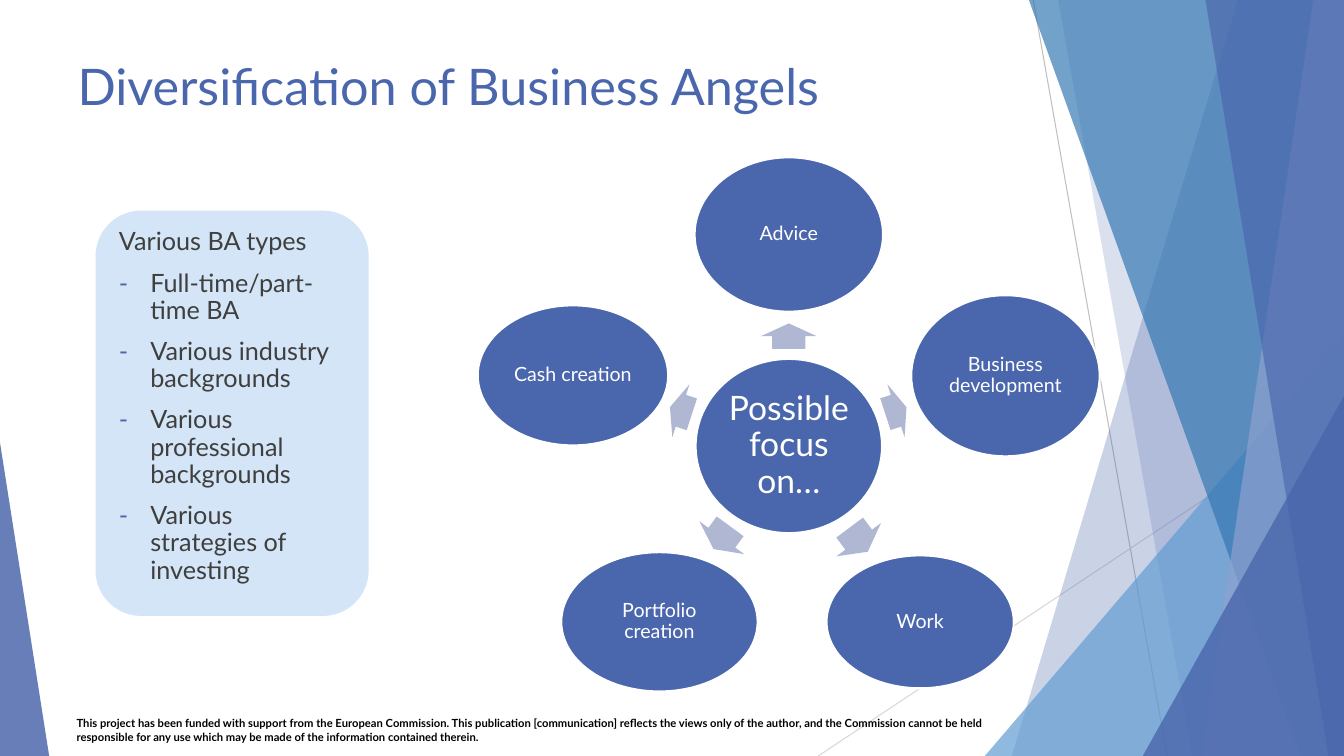
from lxml.etree import SubElement
from pptx import Presentation
from pptx.dml.color import RGBColor
from pptx.enum.shapes import MSO_CONNECTOR, MSO_SHAPE
from pptx.enum.text import MSO_ANCHOR, MSO_AUTO_SIZE, PP_ALIGN
from pptx.oxml.ns import qn
from pptx.util import Cm, Pt

BLUE = RGBColor(0x4A, 0x66, 0xAC)
SKY = RGBColor(0x62, 0x9D, 0xD1)
OCEAN = RGBColor(0x34, 0x77, 0xB2)
PERIWINKLE = RGBColor(0x8F, 0xA1, 0xCF)
ARROW = RGBColor(0xAF, 0xB7, 0xD2)
PANEL = RGBColor(0xD3, 0xE5, 0xF6)
INK = RGBColor(0x3F, 0x3F, 0x3F)
BLACK = RGBColor(0, 0, 0)
WHITE = RGBColor(0xFF, 0xFF, 0xFF)
GREY = RGBColor(0xBF, 0xBF, 0xBF)
PALE_GREY = RGBColor(0xD8, 0xD8, 0xD8)

W, H = 33.87, 19.05
TITLE = "Diversification of Business Angels"
TYPES_HEAD = "Various BA types"
TYPES = [
    "Full-time/part-time BA",
    "Various industry backgrounds",
    "Various professional backgrounds",
    "Various strategies of investing",
]
FUNDING = (
    "This project has been funded with support from the European Commission. "
    "This publication [communication] reflects the views only of the author, "
    "and the Commission cannot be held responsible for any use which may be "
    "made of the information contained therein."
)
HUB = ("Possible focus on…", 19.88, 11.24, 4.7, 4.39)
# label, centre x, centre y, width, height, arrow (centre x, centre y, length, angle)
FOCUS = [
    ("Advice", 19.88, 5.91, 4.75, 3.89, (19.88, 8.47, 0.64, 270)),
    ("Business development", 25.34, 9.47, 4.75, 4.06, (22.58, 10.35, 0.56, 342)),
    ("Work", 23.19, 15.67, 4.72, 3.35, (21.64, 13.6, 0.76, 53.2)),
    ("Portfolio creation", 16.62, 15.67, 4.95, 3.51, (18.19, 13.55, 0.71, 126.3)),
    ("Cash creation", 14.44, 9.46, 4.8, 3.53, (17.16, 10.35, 0.58, 198)),
]
ARROW_WIDTH = 1.4
RAYS = [
    (26.04, 0, 29.41, H, GREY),
    (W, 10.24, 20.62, H, PALE_GREY),
]
FACETS = [
    ("band", (31.19, 25.5), BLUE, 29),
    ("band", (26.67, 30.05), BLUE, 20),
    ("triangle", (24.82, 8.46, W, 1), SKY, 71),
    ("band", (25.93, 32.79), OCEAN, 69),
    ("band", (33.1, 30.28), PERIWINKLE, 69),
    ("band", (30.38, 33.48), BLUE, 64),
    ("triangle", (28.8, 9.98, W, 1), BLUE, 80),
    ("triangle", (0, 11.15, 1.24, 0), BLUE, 84),
]


def assign(obj, values):
    for name, value in values.items():
        setattr(obj, name, value)


def place(sp, x, y, w, h):
    assign(sp, {"left": Cm(x), "top": Cm(y), "width": Cm(w), "height": Cm(h)})


def paint(sp, color, alpha=100):
    sp.shadow.inherit = False
    sp.fill.solid()
    sp.fill.fore_color.rgb = color
    sp.line.fill.background()
    if alpha < 100:
        clr = sp.fill._xPr.find(qn("a:solidFill"))[0]
        SubElement(clr, qn("a:alpha"), val=str(alpha * 1000))


def write(p, text, size, color, bold=False, **layout):
    assign(p, layout)
    r = p.add_run()
    r.text = text
    assign(r.font, {"name": "Lato", "size": Pt(size), "bold": bold})
    r.font.color.rgb = color


def set_bullet(p, char=None):
    pPr = p._p.get_or_add_pPr()
    indent = Cm(0.79) if char else 0
    pPr.set("marL", str(indent))
    pPr.set("indent", str(-indent))
    if char:
        SubElement(SubElement(pPr, qn("a:buClr")), qn("a:srgbClr"), val=str(BLUE))
        SubElement(pPr, qn("a:buFont"), typeface="Lato")
        SubElement(pPr, qn("a:buChar"), char=char)
    else:
        SubElement(pPr, qn("a:buNone"))


def add_ray(s, x1, y1, x2, y2, color):
    ray = s.shapes.add_connector(MSO_CONNECTOR.STRAIGHT, Cm(x1), Cm(y1), Cm(x2), Cm(y2))
    ray.line.color.rgb = color
    ray.line.width = Pt(0.75)
    SubElement(ray._element.spPr, qn("a:effectLst"))


def add_facet(s, kind, geometry, color, alpha):
    if kind == "band":
        top_x, bottom_x = geometry
        builder = s.shapes.build_freeform(Cm(top_x), 0)
        corners = [(W, 0), (W, H), (bottom_x, H)]
        builder.add_line_segments([(Cm(x), Cm(y)) for x, y in corners], close=True)
        sp = builder.convert_to_shape()
    else:
        left, top, right, apex = geometry
        sp = s.shapes.add_shape(MSO_SHAPE.ISOSCELES_TRIANGLE, Cm(left), Cm(top),
                                Cm(right - left), Cm(H - top))
        sp.adjustments[0] = apex
    paint(sp, color, alpha)


def add_centred(s, kind, cx, cy, w, h, color):
    sp = s.shapes.add_shape(kind, Cm(cx - w / 2), Cm(cy - h / 2), Cm(w), Cm(h))
    paint(sp, color)
    return sp


def add_oval(s, label, cx, cy, w, h, size):
    sp = add_centred(s, MSO_SHAPE.OVAL, cx, cy, w, h, BLUE)
    sp.line.color.rgb = WHITE
    sp.line.width = Pt(1.5)
    tf = sp.text_frame
    sides = ("left", "top", "right", "bottom")
    assign(tf, {f"margin_{side}": Cm(0.06) for side in sides})
    assign(tf, {"word_wrap": True, "vertical_anchor": MSO_ANCHOR.MIDDLE})
    write(tf.paragraphs[0], label, size, WHITE,
          alignment=PP_ALIGN.CENTER, line_spacing=0.9)


def main():
    prs = Presentation()
    assign(prs, {"slide_width": Cm(W), "slide_height": Cm(H)})
    s = prs.slides.add_slide(prs.slide_layouts[1])
    top_text = {"auto_size": MSO_AUTO_SIZE.NONE, "word_wrap": True,
                "vertical_anchor": MSO_ANCHOR.TOP}

    for ray in RAYS:
        add_ray(s, *ray)
    for facet in FACETS:
        add_facet(s, *facet)

    title = s.shapes.title
    place(title, 1.7, 1.27, 30.48, 3.81)
    assign(title.text_frame, top_text)
    write(title.text_frame.paragraphs[0], TITLE, 36, BLUE, alignment=PP_ALIGN.LEFT)

    body = s.placeholders[1]
    place(body, 2.41, 5.31, 6.88, 10.21)
    geom = SubElement(body._element.spPr, qn("a:prstGeom"), prst="flowChartAlternateProcess")
    SubElement(geom, qn("a:avLst"))
    body.fill.solid()
    body.fill.fore_color.rgb = PANEL
    tf = body.text_frame
    assign(tf, top_text)
    set_bullet(tf.paragraphs[0])
    write(tf.paragraphs[0], TYPES_HEAD, 18, INK, line_spacing=0.9, space_before=Pt(0))
    for text in TYPES:
        p = tf.add_paragraph()
        set_bullet(p, "-")
        write(p, text, 18, INK, line_spacing=0.9, space_before=Pt(10))

    funding = s.shapes.add_textbox(Cm(1.68), Cm(17.93), Cm(24.03), Cm(0.94))
    funding.text_frame.word_wrap = True
    write(funding.text_frame.paragraphs[0], FUNDING, 8, BLACK, bold=True)

    add_oval(s, *HUB, 24)
    for label, cx, cy, w, h, (ax, ay, length, angle) in FOCUS:
        arrow = add_centred(s, MSO_SHAPE.RIGHT_ARROW, ax, ay, length, ARROW_WIDTH, ARROW)
        arrow.adjustments[0] = 0.6
        arrow.rotation = angle
        add_oval(s, label, cx, cy, w, h, 14)

    prs.save("out.pptx")


if __name__ == "__main__":
    main()
